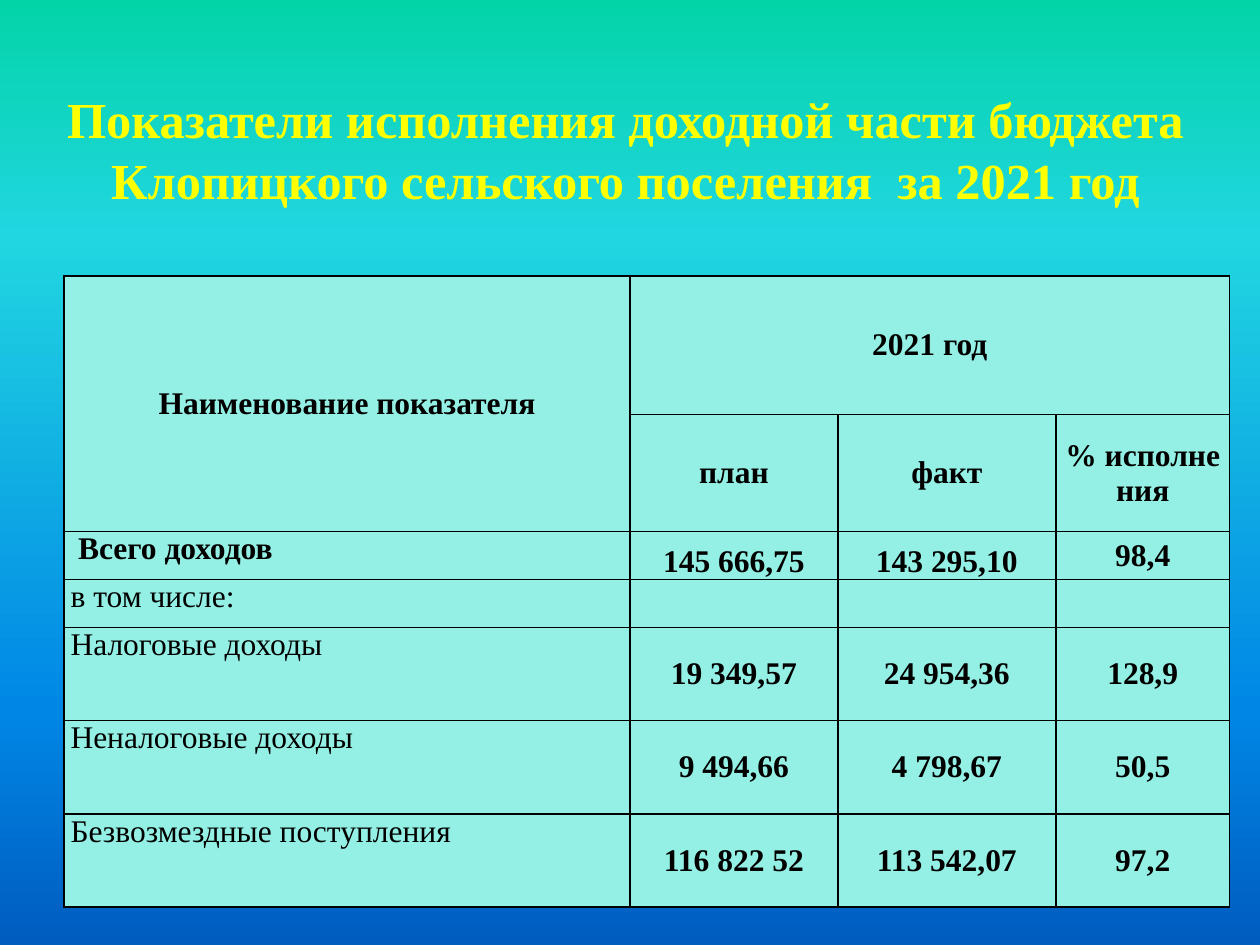
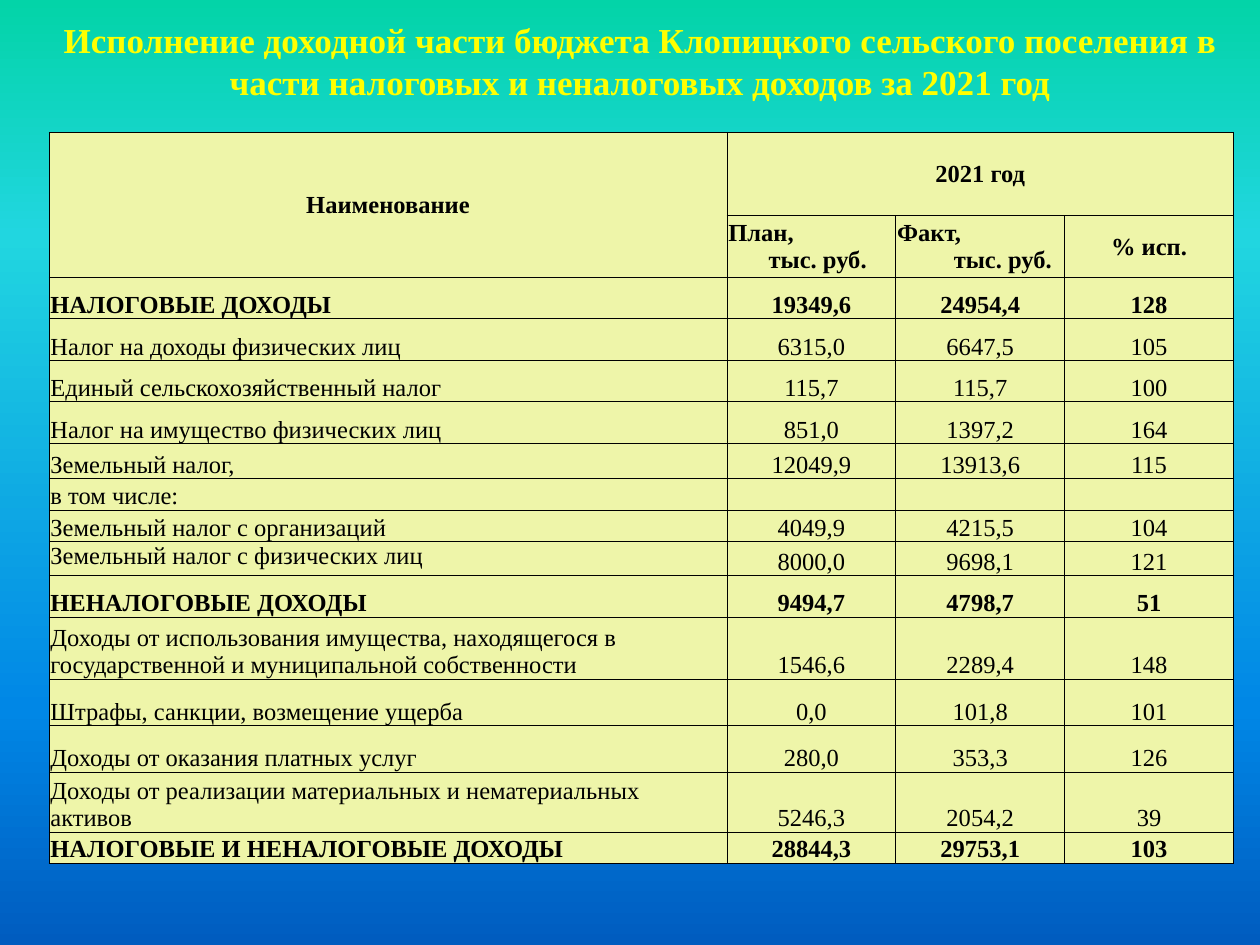
"""Build two slides on the 2021 budget revenue of a rural settlement."""
from dataclasses import dataclass

from lxml import etree
from pptx import Presentation
from pptx.dml.color import RGBColor
from pptx.enum import text
from pptx.oxml.ns import qn
from pptx.util import Inches, Length, Pt

FONT = "Times New Roman"
BLACK = RGBColor(0x00, 0x00, 0x00)
YELLOW = RGBColor(0xFF, 0xFF, 0x00)
MINT = RGBColor(0x94, 0xF0, 0xE4)
CREAM = RGBColor(0xEE, 0xF5, 0xA9)
BACKDROP = (
    (0, RGBColor(0x03, 0xD4, 0xA8)),
    (25, RGBColor(0x21, 0xD6, 0xE0)),
    (75, RGBColor(0x00, 0x87, 0xE6)),
    (100, RGBColor(0x00, 0x5C, 0xBF)),
)
LEFT, CENTER = text.PP_ALIGN.LEFT, text.PP_ALIGN.CENTER
ANCHORS = {
    "t": text.MSO_ANCHOR.TOP,
    "m": text.MSO_ANCHOR.MIDDLE,
    "b": text.MSO_ANCHOR.BOTTOM,
}


@dataclass(frozen=True)
class Heading:
    wording: str
    box: tuple[float, float, float, float]
    size: float


@dataclass(frozen=True)
class Line:
    wording: str
    align: text.PP_ALIGN = CENTER
    indent: float = 0


@dataclass(frozen=True)
class Row:
    height: float
    label: str
    values: tuple[str, ...] = ("", "", "")
    bold_label: bool = False
    bold_values: bool = False
    anchors: str = "bbbb"
    indent: float = 0


@dataclass(frozen=True)
class Report:
    heading: Heading
    left: float
    top: float
    widths: tuple[float, ...]
    header_heights: tuple[float, float]
    label_header: str
    value_headers: tuple[tuple[Line, ...], ...]
    rows: tuple[Row, ...]
    fill: RGBColor
    size: float
    border: float
    insets: tuple[float, float, float, float]


REVENUE = Report(
    heading=Heading(
        "Показатели исполнения доходной части бюджета Клопицкого "
        "сельского поселения  за 2021 год",
        (0.16, 0.23, 9.61, 1.48), 28.8),
    left=0.51, top=2.19,
    widths=(4.49, 1.65, 1.73, 1.38),
    header_heights=(1.1, 0.93),
    label_header="Наименование показателя",
    value_headers=((Line("план"),), (Line("факт"),), (Line("% исполне ния"),)),
    rows=(
        Row(0.38, "Всего доходов", ("145 666,75", "143 295,10", "98,4"),
            True, True, "tbbm", 0.06),
        Row(0.38, "в том числе:", anchors="tmmm"),
        Row(0.74, "Налоговые доходы", ("19 349,57", "24 954,36", "128,9"),
            False, True, "tmmm"),
        Row(0.74, "Неналоговые доходы", ("9 494,66", "4 798,67", "50,5"),
            False, True, "tmmm"),
        Row(0.74, "Безвозмездные поступления",
            ("116 822 52", "113 542,07", "97,2"), False, True, "tmmm"),
    ),
    fill=MINT, size=18, border=1, insets=(0.05, 0, 0.05, 0),
)

TAXES = Report(
    heading=Heading(
        "Исполнение доходной части бюджета Клопицкого сельского поселения "
        "в части налоговых и неналоговых доходов за 2021 год",
        (0.39, 0.16, 9.38, 0.7), 20),
    left=0.39, top=1.05,
    widths=(5.38, 1.34, 1.34, 1.34),
    header_heights=(0.66, 0.49),
    label_header="Наименование",
    value_headers=(
        (Line("План,", LEFT), Line("тыс. руб.", LEFT, 0.32)),
        (Line("Факт,", LEFT), Line("тыс. руб.", LEFT, 0.45)),
        (Line("% исп."),),
    ),
    rows=(
        Row(0.33, "НАЛОГОВЫЕ ДОХОДЫ", ("19349,6", "24954,4", "128"), True, True),
        Row(0.33, "Налог на доходы физических лиц", ("6315,0", "6647,5", "105")),
        Row(0.33, "Единый сельскохозяйственный налог", ("115,7", "115,7", "100")),
        Row(0.33, "Налог на имущество физических лиц", ("851,0", "1397,2", "164")),
        Row(0.28, "Земельный налог,", ("12049,9", "13913,6", "115")),
        Row(0.25, "в том числе:"),
        Row(0.25, "Земельный налог с организаций", ("4049,9", "4215,5", "104")),
        Row(0.27, "Земельный налог с физических лиц", ("8000,0", "9698,1", "121"),
            anchors="tbbb"),
        Row(0.33, "НЕНАЛОГОВЫЕ ДОХОДЫ", ("9494,7", "4798,7", "51"), True, True),
        Row(0.49, "Доходы от использования имущества, находящегося в "
            "государственной и муниципальной собственности",
            ("1546,6", "2289,4", "148")),
        Row(0.37, "Штрафы, санкции, возмещение ущерба", ("0,0", "101,8", "101")),
        Row(0.37, "Доходы от оказания платных услуг", ("280,0", "353,3", "126")),
        Row(0.37, "Доходы от реализации материальных и нематериальных активов",
            ("5246,3", "2054,2", "39")),
        Row(0.24, "НАЛОГОВЫЕ И НЕНАЛОГОВЫЕ ДОХОДЫ",
            ("28844,3", "29753,1", "103"), True, True),
    ),
    fill=CREAM, size=14, border=0.5, insets=(0.01, 0.01, 0.01, 0),
)


def add_color(parent, color: RGBColor) -> None:
    """Append an RGB colour element to a fill or gradient stop."""
    etree.SubElement(parent, qn("a:srgbClr"), val=str(color))


def paint_backdrop(master) -> None:
    """Give the slide master the vertical gradient that all slides share."""
    fill = master.background.fill
    fill.gradient()
    fill.gradient_angle = 270
    stops = next(master.element.iter(qn("a:gsLst")))
    for stop in list(stops):
        stops.remove(stop)
    for percent, color in BACKDROP:
        stop = etree.SubElement(stops, qn("a:gs"), pos=str(percent * 1000))
        add_color(stop, color)


def write_run(paragraph, wording: str, size: float, color: RGBColor, bold: bool) -> None:
    """Add one styled run to a paragraph."""
    run = paragraph.add_run()
    run.text = wording
    run.font.name = FONT
    run.font.size = Pt(size)
    run.font.bold = bold
    run.font.color.rgb = color


def add_heading(slide, heading: Heading) -> None:
    """Place the yellow slide heading."""
    frame = slide.shapes.add_textbox(*map(Inches, heading.box)).text_frame
    frame.word_wrap = True
    frame.vertical_anchor = text.MSO_ANCHOR.BOTTOM
    paragraph = frame.paragraphs[0]
    paragraph.alignment = CENTER
    write_run(paragraph, heading.wording, heading.size, YELLOW, True)


def outline_cell(cell, width: Length) -> None:
    """Draw a black line on all four sides of a cell."""
    properties = cell._tc.get_or_add_tcPr()
    for place, side in enumerate(("lnL", "lnR", "lnT", "lnB")):
        line = etree.Element(qn(f"a:{side}"), w=str(int(width)))
        add_color(etree.SubElement(line, qn("a:solidFill")), BLACK)
        properties.insert(place, line)


def write_cell(cell, lines: tuple[Line, ...], size: float, bold: bool, anchor: str) -> None:
    """Write the lines of a cell as paragraphs."""
    cell.vertical_anchor = ANCHORS[anchor]
    for number, line in enumerate(lines):
        frame = cell.text_frame
        paragraph = frame.add_paragraph() if number else frame.paragraphs[0]
        paragraph.alignment = line.align
        if line.indent:
            paragraph._p.get_or_add_pPr().set("marL", str(int(Inches(line.indent))))
        if line.wording:
            write_run(paragraph, line.wording, size, BLACK, bold)
        else:
            etree.SubElement(paragraph._p, qn("a:endParaRPr"), sz=str(int(size * 100)))


def add_report(slide, report: Report) -> None:
    """Place the heading and the revenue table of one slide."""
    add_heading(slide, report.heading)
    heights = report.header_heights + tuple(row.height for row in report.rows)
    table = slide.shapes.add_table(
        len(heights), len(report.widths), Inches(report.left), Inches(report.top),
        Inches(sum(report.widths)), Inches(sum(heights))).table
    table.first_row = table.horz_banding = False
    for column, width in zip(table.columns, report.widths):
        column.width = Inches(width)
    for table_row, height in zip(table.rows, heights):
        table_row.height = Inches(height)
    for cell in table.iter_cells():
        (cell.margin_left, cell.margin_top,
         cell.margin_right, cell.margin_bottom) = map(Inches, report.insets)
        cell.fill.solid()
        cell.fill.fore_color.rgb = report.fill
        outline_cell(cell, Pt(report.border))

    table.cell(0, 0).merge(table.cell(1, 0))
    table.cell(0, 1).merge(table.cell(0, 3))
    write_cell(table.cell(0, 0), (Line(report.label_header),), report.size, True, "m")
    write_cell(table.cell(0, 1), (Line("2021 год"),), report.size, True, "m")
    for column, lines in enumerate(report.value_headers, 1):
        write_cell(table.cell(1, column), lines, report.size, True, "m")
    for number, row in enumerate(report.rows, 2):
        label = Line(row.label, LEFT, row.indent)
        write_cell(table.cell(number, 0), (label,), report.size,
                   row.bold_label, row.anchors[0])
        for column, value in enumerate(row.values, 1):
            write_cell(table.cell(number, column), (Line(value),), report.size,
                       row.bold_values, row.anchors[column])


def main() -> None:
    """Build and save the presentation."""
    deck = Presentation()
    deck.slide_width, deck.slide_height = Inches(10), Inches(7.5)
    paint_backdrop(deck.slide_master)
    for report in (REVENUE, TAXES):
        add_report(deck.slides.add_slide(deck.slide_layouts[6]), report)
    deck.save("out.pptx")


if __name__ == "__main__":
    main()
